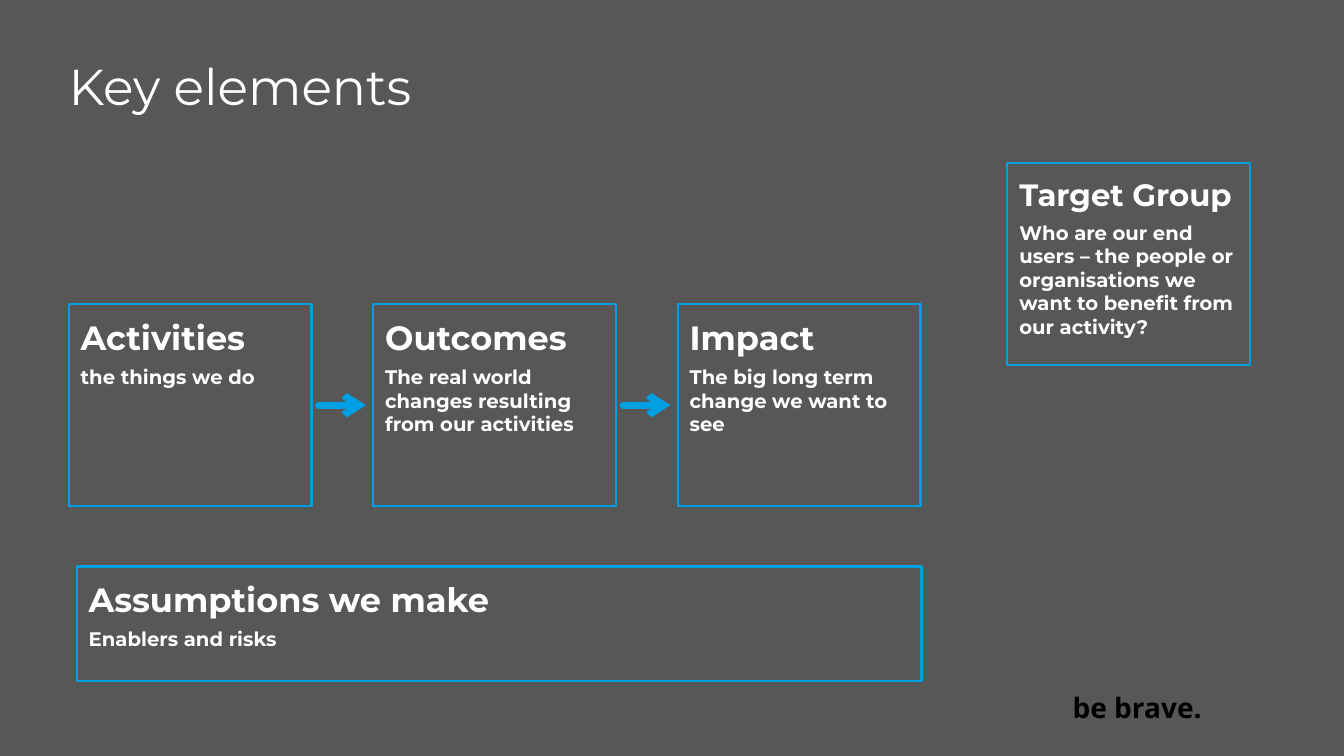
"""Build the "Key elements" slide: activities lead to outcomes, which lead to impact."""
from lxml import etree
from pptx import Presentation
from pptx import util as u
from pptx.dml.color import RGBColor
from pptx.enum import shapes, text
from pptx.oxml.ns import qn

COLORS = {"background": "585758", "accent": "009FE3", "light": "FFFFFF", "dark": "000000"}
STEP_LEFT, STEP_PITCH, STEP_TOP = 0.68, 3.02, 3.02
CARD_WIDTH, CARD_HEIGHT = 2.41, 2
ARROW_GAP, ARROW_LENGTH = 0.07, 0.47


def write(paragraph, wording, size, bold=True, name="Montserrat", color="light"):
    paragraph.text = wording
    paragraph.alignment = text.PP_ALIGN.LEFT
    for key, value in {"size": u.Pt(size), "bold": bold, "name": name}.items():
        setattr(paragraph.font, key, value)
    paragraph.font.color.rgb = RGBColor.from_string(COLORS[color])


def set_frame(frame, inset_x, inset_y, anchor, wrap=True):
    settings = {
        "margin_left": u.Inches(inset_x), "margin_right": u.Inches(inset_x),
        "margin_top": u.Inches(inset_y), "margin_bottom": u.Inches(inset_y),
        "vertical_anchor": anchor, "word_wrap": wrap,
    }
    for key, value in settings.items():
        setattr(frame, key, value)


prs = Presentation()
prs.slide_width, prs.slide_height = u.Inches(13.33), u.Inches(7.5)
slide = prs.slides.add_slide(prs.slide_layouts[6])
slide.background.fill.solid()
slide.background.fill.fore_color.rgb = RGBColor.from_string(COLORS["background"])
accent = RGBColor.from_string(COLORS["accent"])

slogan = slide.shapes.add_textbox(*map(u.Inches, (10.54, 6.8, 1.48, 0.44))).text_frame
set_frame(slogan, 0.1, 0.05, text.MSO_ANCHOR.TOP, wrap=False)
write(slogan.paragraphs[0], "be brave.", 20, name="Noto Sans", color="dark")

title = slide.shapes.add_textbox(*map(u.Inches, (0.6, 0.16, 11.5, 1.45))).text_frame
set_frame(title, 0.08, 0, text.MSO_ANCHOR.MIDDLE)
write(title.paragraphs[0], "Key elements", 36, bold=False)
title.paragraphs[0].line_spacing = 0.9

steps = [
    ("Activities", "the things we do"),
    ("Outcomes", "The real world changes resulting from our activities"),
    ("Impact", "The big long term change we want to see"),
]
cards = [
    (STEP_LEFT + i * STEP_PITCH, STEP_TOP, CARD_WIDTH, CARD_HEIGHT, heading, 24, detail)
    for i, (heading, detail) in enumerate(steps)
]
cards += [
    (0.76, 5.62, 8.38, 1.14, "Assumptions we make", 24, "Enablers and risks"),
    (9.99, 1.62, CARD_WIDTH, CARD_HEIGHT, "Target Group", 22,
     "Who are our end users – the people or organisations we want to benefit from our activity?"),
]
for left, top, width, height, heading, heading_size, detail in cards:
    card = slide.shapes.add_shape(
        shapes.MSO_SHAPE.RECTANGLE, *map(u.Inches, (left, top, width, height)))
    card.shadow.inherit = False
    card.fill.background()
    card.line.color.rgb = accent
    card.line.width = u.Pt(1.5)
    set_frame(card.text_frame, 0.12, 0.12, text.MSO_ANCHOR.TOP)
    write(card.text_frame.paragraphs[0], heading, heading_size)
    write(card.text_frame.add_paragraph(), detail, 14)
    for paragraph in card.text_frame.paragraphs:
        paragraph.space_after = u.Pt(6)

arrow_y = u.Inches(STEP_TOP + CARD_HEIGHT / 2)
for i in range(len(steps) - 1):
    start = STEP_LEFT + i * STEP_PITCH + CARD_WIDTH + ARROW_GAP
    arrow = slide.shapes.add_connector(
        shapes.MSO_CONNECTOR.STRAIGHT, u.Inches(start), arrow_y,
        u.Inches(start + ARROW_LENGTH), arrow_y)
    arrow.line.color.rgb = accent
    arrow.line.width = u.Pt(5)
    outline = arrow.line._get_or_add_ln()
    outline.set("cap", "rnd")
    etree.SubElement(outline, qn("a:tailEnd"), type="arrow")
    etree.SubElement(arrow._element.spPr, qn("a:effectLst"))

prs.save("out.pptx")
